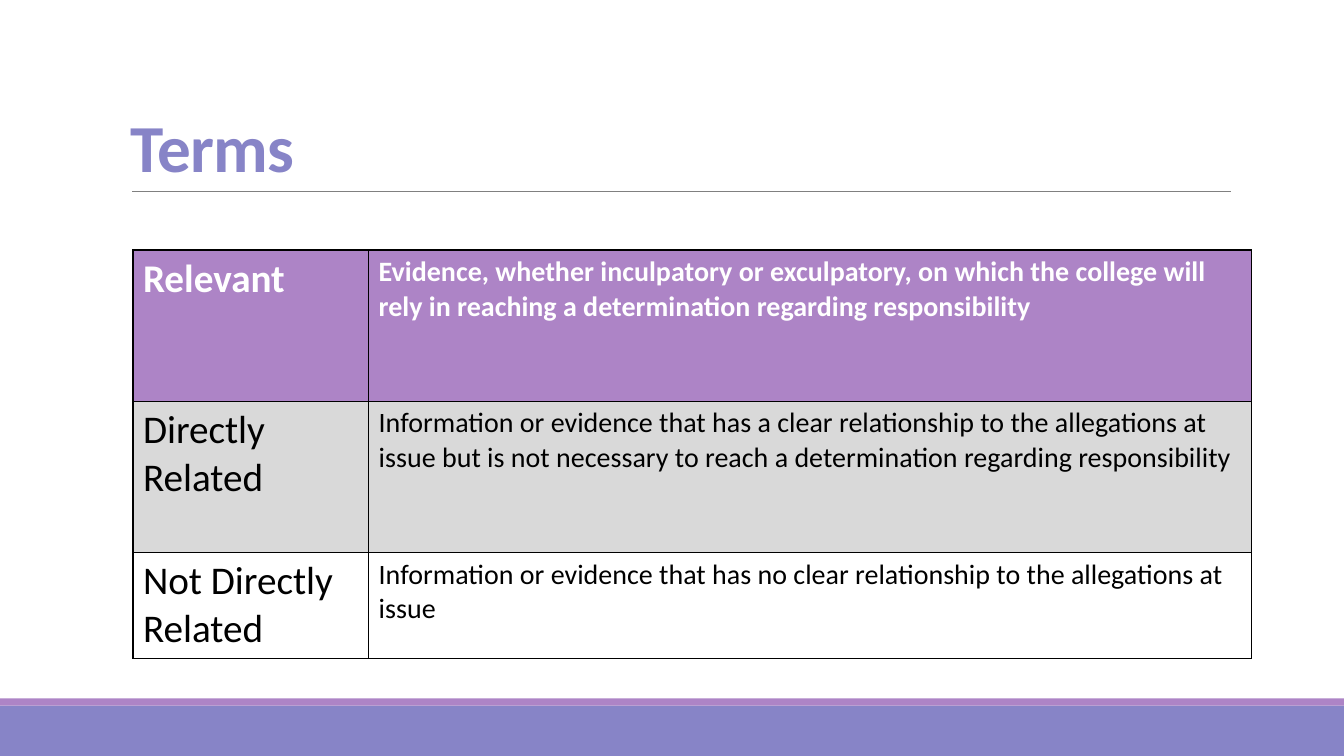
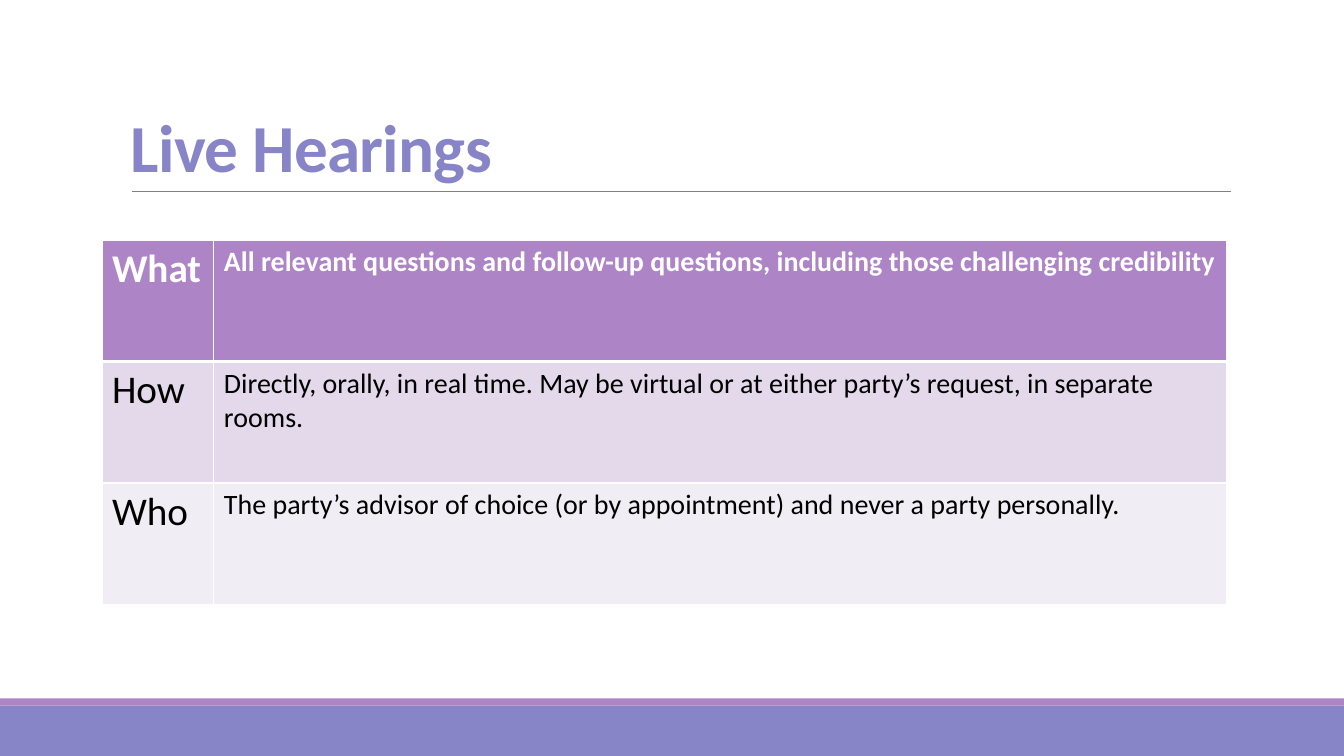
from lxml.etree import SubElement
from pptx import Presentation
from pptx.dml.color import RGBColor
from pptx.enum.shapes import MSO_CONNECTOR, MSO_SHAPE
from pptx.enum.text import MSO_ANCHOR
from pptx.oxml.ns import qn
from pptx.util import Cm, Pt

# Shared look
FONT = "Calibri"
BLUE = RGBColor(0x87, 0x84, 0xC7)
PURPLE = RGBColor(0xAD, 0x84, 0xC6)
GRAY = RGBColor(0x80, 0x80, 0x80)
SILVER = RGBColor(0xD9, 0xD9, 0xD9)
LILAC = RGBColor(0xE3, 0xD9, 0xEA)
PALE = RGBColor(0xF1, 0xED, 0xF5)
WHITE = RGBColor(0xFF, 0xFF, 0xFF)
BLACK = RGBColor(0x00, 0x00, 0x00)

SLIDE_W, SLIDE_H = 33.87, 19.05
BANDS = [(17.78, 1.27, BLUE), (17.6, 0.18, PURPLE)]  # top, height, colour
RULE_LEFT, RULE_RIGHT, RULE_Y = 3.33, 31.01, 4.83
TITLE_BOX = (3.05, 0.79, 27.94, 4.04)
COLUMN_SIZES = (28, 20)

# Content, lengths in cm, border widths in points
SLIDES = [
    {
        "title": "Terms",
        "at": (3.35, 6.3),
        "cols": (5.94, 22.25),
        "heights": (3.81, 3.81, 2.67),
        "fills": (PURPLE, SILVER, WHITE),
        "border": BLACK,
        "header_rule": 1,
        "rows": [
            ("Relevant", "Evidence, whether inculpatory or exculpatory, on which the college "
                         "will rely in reaching a determination regarding responsibility"),
            ("Directly Related", "Information or evidence that has a clear relationship to the "
                                 "allegations at issue but is not necessary to reach a "
                                 "determination regarding responsibility"),
            ("Not Directly Related", "Information or evidence that has no clear relationship to "
                                     "the allegations at issue"),
        ],
    },
    {
        "title": "Live Hearings",
        "at": (2.57, 6.05),
        "cols": (2.82, 25.52),
        "heights": (3.06, 3.06, 3.06),
        "fills": (PURPLE, LILAC, PALE),
        "border": WHITE,
        "header_rule": 3,
        "rows": [
            ("What", "All relevant questions and follow-up questions, including those "
                     "challenging credibility"),
            ("How", "Directly, orally, in real time. May be virtual or at either party’s "
                    "request, in separate rooms."),
            ("Who", "The party’s advisor of choice (or by appointment) and never a party "
                    "personally."),
        ],
    },
]


def add_run(p, text, size, color, bold):
    r = p.add_run()
    r.text = text
    f = r.font
    f.name, f.size, f.bold = FONT, Pt(size), bold
    f.color.rgb = color
    return r


def add_frame(s):
    """Footer bands and the rule under the title."""
    for top, height, color in BANDS:
        sp = s.shapes.add_shape(MSO_SHAPE.RECTANGLE, 0, Cm(top), Cm(SLIDE_W), Cm(height))
        sp.shadow.inherit = False
        sp.fill.solid()
        sp.fill.fore_color.rgb = color
        sp.line.fill.background()
    rule = s.shapes.add_connector(MSO_CONNECTOR.STRAIGHT, Cm(RULE_LEFT), Cm(RULE_Y),
                                  Cm(RULE_RIGHT), Cm(RULE_Y))
    rule.line.color.rgb = GRAY
    rule.line.width = Pt(0.5)
    SubElement(rule._element.spPr, qn("a:effectLst"))


def add_title(s, text):
    tf = s.shapes.add_textbox(*map(Cm, TITLE_BOX)).text_frame
    tf.word_wrap = True
    tf.vertical_anchor = MSO_ANCHOR.BOTTOM
    p = tf.paragraphs[0]
    p.line_spacing = 0.85
    r = add_run(p, text, 48, BLUE, True)
    r.font._element.set("spc", "-50")


def set_borders(cell, color, top, bottom):
    tcPr = cell._tc.get_or_add_tcPr()
    for side, width in (("L", 1), ("R", 1), ("T", top), ("B", bottom)):
        ln = SubElement(tcPr, qn(f"a:ln{side}"), w=str(Pt(width)))
        fill = SubElement(ln, qn("a:solidFill"))
        SubElement(fill, qn("a:srgbClr"), val=str(color))


def add_term_table(s, spec_):
    rows, cols, heights = spec_["rows"], spec_["cols"], spec_["heights"]
    left, top = spec_["at"]
    table = s.shapes.add_table(len(rows), len(cols), Cm(left), Cm(top),
                               Cm(sum(cols)), Cm(sum(heights))).table
    for col, width in zip(table.columns, cols):
        col.width = Cm(width)
    for i, texts in enumerate(rows):
        table.rows[i].height = Cm(heights[i])
        header = i == 0
        rule_above = spec_["header_rule"] if i == 1 else 1
        rule_below = spec_["header_rule"] if header else 1
        for j, text in enumerate(texts):
            cell = table.cell(i, j)
            set_borders(cell, spec_["border"], rule_above, rule_below)
            cell.fill.solid()
            cell.fill.fore_color.rgb = spec_["fills"][i]
            add_run(cell.text_frame.paragraphs[0], text, COLUMN_SIZES[j],
                    WHITE if header else BLACK, header)


def main():
    prs = Presentation()
    prs.slide_width, prs.slide_height = Cm(SLIDE_W), Cm(SLIDE_H)
    for content in SLIDES:
        s = prs.slides.add_slide(prs.slide_layouts[6])
        add_frame(s)
        add_title(s, content["title"])
        add_term_table(s, content)
    prs.save("out.pptx")


if __name__ == "__main__":
    main()
